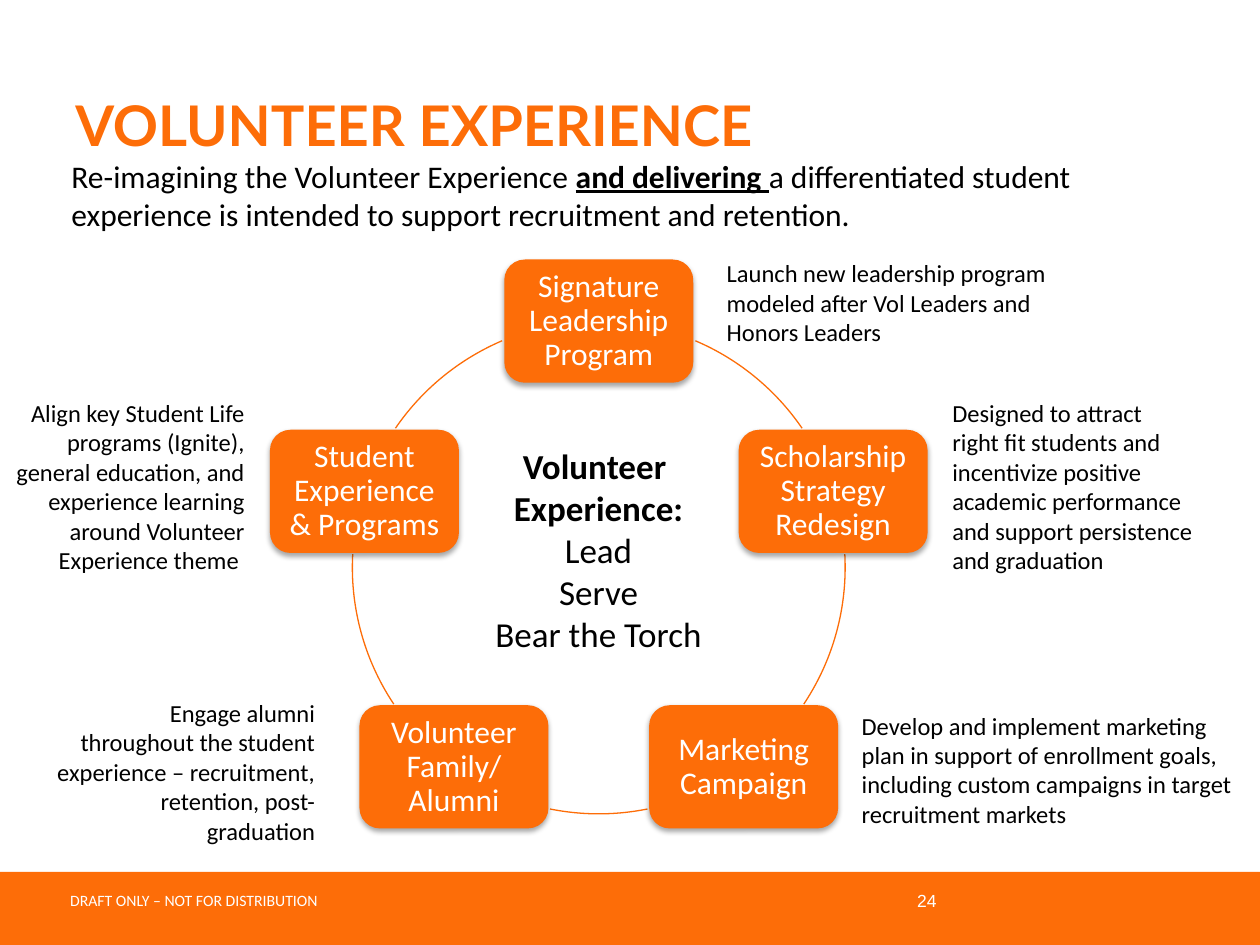
import math

from pptx import Presentation
from pptx import util as u
from pptx.dml.color import RGBColor
from pptx.enum import shapes, text
from pptx.oxml import parse_xml
from pptx.oxml.ns import nsdecls

ORANGE = RGBColor(0xFD, 0x6D, 0x08)
WHITE = RGBColor(0xFF, 0xFF, 0xFF)
BLACK = RGBColor(0, 0, 0)
LEFT, CENTER, RIGHT = text.PP_ALIGN.LEFT, text.PP_ALIGN.CENTER, text.PP_ALIGN.RIGHT
TOP, MIDDLE = text.MSO_ANCHOR.TOP, text.MSO_ANCHOR.MIDDLE

# Content: each paragraph is a list of (words, extra format) runs
TITLE = [[("VOLUNTEER EXPERIENCE", {"bold": True})]]
INTRO = [[
    ("Re-imagining the Volunteer Experience ", {}),
    ("and delivering ", {"bold": True, "underline": True}),
    ("a differentiated student experience is intended to support "
     "recruitment and retention.", {}),
]]
HUB = [
    [("Volunteer ", {"bold": True})],
    [("Experience:", {"bold": True})],
    [("Lead", {})],
    [("Serve", {})],
    [("Bear the Torch", {})],
]
# Clockwise from the top: label, note, note frame, note alignment
STEPS = [
    ("Signature Leadership Program",
     "Launch new leadership program modeled after Vol Leaders and Honors Leaders",
     (408.2, 144, 204.5, 58.3), LEFT),
    ("Scholarship Strategy Redesign",
     "Designed to attract right fit students and incentivize positive academic "
     "performance and support persistence and graduation",
     (537.1, 223.9, 151.9, 108.7), LEFT),
    ("Marketing Campaign",
     "Develop and implement marketing plan in support of enrollment goals, "
     "including custom campaigns in target recruitment markets",
     (485.3, 402.5, 234, 74.9), LEFT),
    ("Volunteer Family/ Alumni",
     "Engage alumni throughout the student experience – recruitment, "
     "retention, post-graduation",
     (24.5, 395.3, 162.7, 92.2), RIGHT),
    ("Student Experience & Programs",
     "Align key Student Life programs (Ignite), general education, and "
     "experience learning around Volunteer Experience theme ",
     (-5, 223.9, 151.9, 108.7), RIGHT),
]
# Visible ring between neighbouring boxes, degrees clockwise from the right
ARCS = [(293.1, 325.6), (356.9, 33.7), (78.6, 101.4), (146.3, 183.1), (214.4, 246.9)]

RING_X, RING_Y, RADIUS = 342.2, 324.3, 140.8
BOX_W, BOX_H = 108, 70.4
BOX_MARGIN = 4.8  # the rounded corners add their own inset
SHADOW = (f'<a:outerShdw {nsdecls("a")} blurRad="39400" dist="22900" dir="5400000" '
          'rotWithShape="0"><a:srgbClr val="000000"><a:alpha val="35000"/>'
          '</a:srgbClr></a:outerShdw>')


def points(frame):
    return [u.Pt(value) for value in frame]


def write(shape, paragraphs, size, color=BLACK, font="Calibri", align=LEFT,
          anchor=TOP, wrap=True, spacing=None):
    frame = shape.text_frame
    frame.word_wrap = wrap
    frame.vertical_anchor = anchor
    for index, runs in enumerate(paragraphs):
        para = frame.add_paragraph() if index else frame.paragraphs[0]
        para.alignment = align
        para.line_spacing = spacing
        for words, extra in runs:
            span = para.add_run()
            span.text = words
            span.font.color.rgb = color
            values = {"name": font, "size": u.Pt(size), "bold": False, **extra}
            for name, value in values.items():
                setattr(span.font, name, value)


def add_text(page, frame, paragraphs, size, **style):
    write(page.shapes.add_textbox(*points(frame)), paragraphs, size, **style)


def add_filled(page, kind, frame):
    shape = page.shapes.add_shape(kind, *points(frame))
    shape.shadow.inherit = False
    shape.fill.solid()
    shape.fill.fore_color.rgb = ORANGE
    shape.line.fill.background()
    return shape


def add_step(page, index, label):
    angle = math.radians(-90 + index * 360 / len(STEPS))
    left = RING_X + RADIUS * math.cos(angle) - BOX_W / 2
    top = RING_Y + RADIUS * math.sin(angle) - BOX_H / 2
    box = add_filled(page, shapes.MSO_SHAPE.ROUNDED_RECTANGLE, (left, top, BOX_W, BOX_H))
    box.element.spPr.find("{*}effectLst").append(parse_xml(SHADOW))
    for side in ("left", "right", "top", "bottom"):
        setattr(box.text_frame, f"margin_{side}", u.Pt(BOX_MARGIN))
    write(box, [[(label, {})]], 18, color=WHITE, align=CENTER, anchor=MIDDLE, spacing=0.9)


def add_arc(page, start, end):
    frame = (RING_X - RADIUS, RING_Y - RADIUS, 2 * RADIUS, 2 * RADIUS)
    arc = page.shapes.add_shape(shapes.MSO_SHAPE.ARC, *points(frame))
    arc.shadow.inherit = False
    arc.fill.background()
    arc.line.color.rgb = ORANGE
    arc.line.width = u.Pt(0.75)
    # Arc angles are stored in 1/60000 degree, adjustments in 1/100000
    arc.adjustments[0] = start * 0.6
    arc.adjustments[1] = end * 0.6


def main():
    deck = Presentation()
    deck.slide_width, deck.slide_height = u.Pt(720), u.Pt(540)
    page = deck.slides.add_slide(deck.slide_layouts[6])

    # Footer band
    add_filled(page, shapes.MSO_SHAPE.RECTANGLE, (0, 498.2, 720, 41.8))
    add_text(page, (33, 505.4, 158.4, 18), [[("DRAFT ONLY – NOT FOR DISTRIBUTION", {})]],
             9, color=WHITE, wrap=False)
    add_text(page, (374.4, 500.4, 167.8, 28.8), [[("24", {})]], 10, color=WHITE,
             font="Arial", align=RIGHT, anchor=MIDDLE)

    # Heading
    add_text(page, (36, 25.9, 648, 90), TITLE, 32, color=ORANGE, font="Lato", anchor=MIDDLE)
    add_text(page, (33.8, 50.4, 650.2, 121.7), INTRO, 18, anchor=MIDDLE)

    # Ring of steps with notes around the hub
    for index, (label, note, frame, align) in enumerate(STEPS):
        add_arc(page, *ARCS[index])
        add_step(page, index, label)
        add_text(page, frame, [[(note, {})]], 14, align=align)
    add_text(page, (274.3, 250.6, 135.4, 128.2), HUB, 20, align=CENTER, wrap=False)

    deck.save("out.pptx")


if __name__ == "__main__":
    main()
